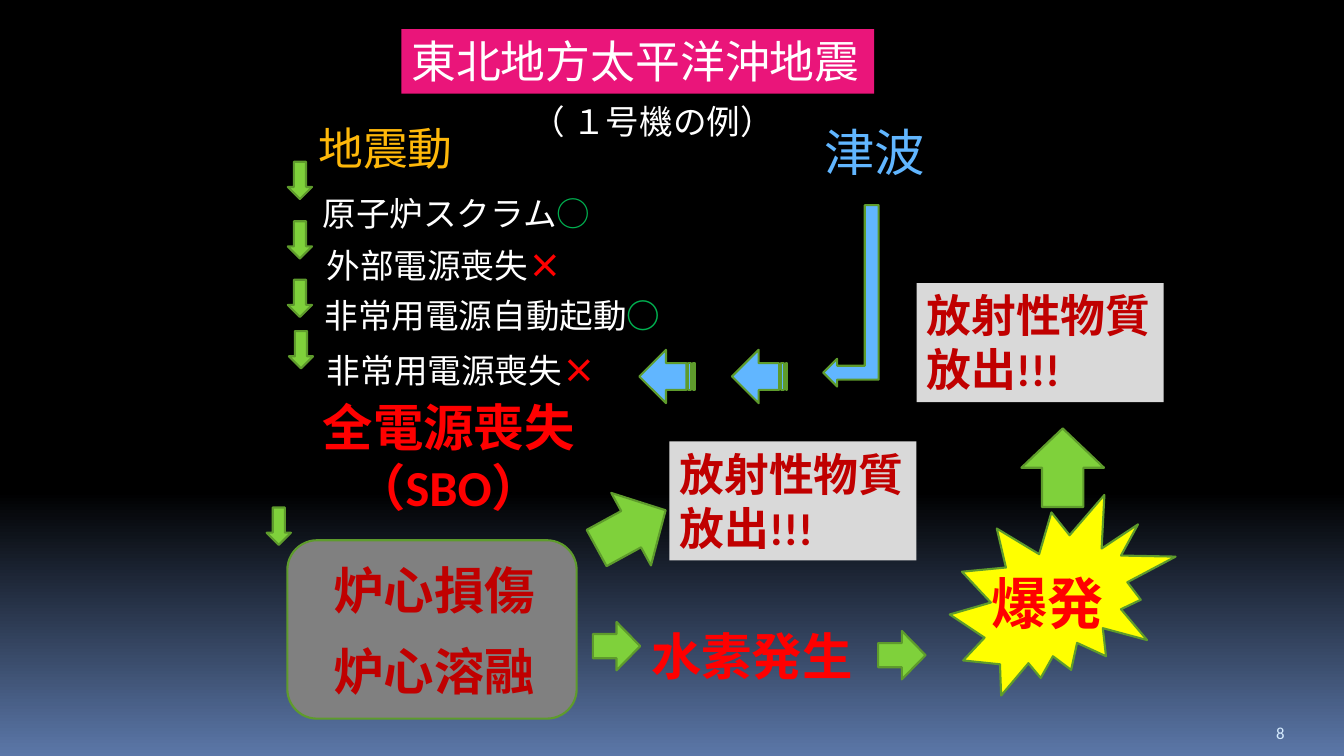
from dataclasses import dataclass

from pptx import Presentation
from pptx.dml.color import RGBColor
from pptx.enum.shapes import MSO_SHAPE
from pptx.enum.text import MSO_ANCHOR, PP_ALIGN
from pptx.util import Inches, Pt

RECT = MSO_SHAPE.RECTANGLE
ROUNDED = MSO_SHAPE.ROUNDED_RECTANGLE
BURST = MSO_SHAPE.EXPLOSION2
ARROW = MSO_SHAPE.RIGHT_ARROW
STRIPED_ARROW = MSO_SHAPE.STRIPED_RIGHT_ARROW
BENT_ARROW = MSO_SHAPE.BENT_UP_ARROW
LEFT, CENTER = PP_ALIGN.LEFT, PP_ALIGN.CENTER
TOP, BOTTOM = MSO_ANCHOR.TOP, MSO_ANCHOR.BOTTOM


@dataclass(frozen=True)
class Theme:
    font: str = "Calibri"
    mark_font: str = "Noto Sans CJK JP"
    black: str = "000000"
    dusk: str = "5B77A8"
    white: str = "FFFFFF"
    pink: str = "EA157A"
    amber: str = "FEB80A"
    sky: str = "61B6FF"
    green: str = "7FD13B"
    outline: str = "5E9B2C"
    ok: str = "00B050"
    red: str = "FF0000"
    dark_red: str = "C00000"
    yellow: str = "FFFF00"
    gray: str = "808080"
    light_gray: str = "D9D9D9"
    page: str = "D6ECFF"
    burst_size: int = 40
    stage_size: int = 36
    heading_size: int = 32
    step_size: int = 24
    page_size: int = 12
    outline_width: float = 1.5


THEME = Theme()


def rgb(color):
    return RGBColor.from_string(color)


def add_figure(slide, kind, box, fill, rotation=0, outlined=True):
    figure = slide.shapes.add_shape(kind, *map(Inches, box))
    figure.shadow.inherit = False
    figure.rotation = rotation
    figure.fill.solid()
    figure.fill.fore_color.rgb = rgb(fill)
    if outlined:
        figure.line.color.rgb = rgb(THEME.outline)
        figure.line.width = Pt(THEME.outline_width)
    else:
        figure.line.fill.background()
    return figure


def write(frame, lines, size, color, bold=False, align=LEFT, wrap=True, anchor=TOP):
    frame.word_wrap = wrap
    frame.vertical_anchor = anchor
    for index, line in enumerate(lines):
        paragraph = frame.add_paragraph() if index else frame.paragraphs[0]
        paragraph.alignment = align
        paragraph.font.name = THEME.font
        paragraph.font.size = Pt(size)
        paragraph.font.bold = bold
        paragraph.font.color.rgb = rgb(color)
        paragraph.add_run().text = line


def add_label(slide, box, text, size, color, **style):
    label = slide.shapes.add_textbox(*map(Inches, box))
    write(label.text_frame, [text], size, color, **style)
    return label


def add_step(slide, box, text, mark, mark_bold):
    """Place one plant event followed by its success or failure mark."""
    step = add_label(slide, box, text, THEME.step_size, THEME.white)
    result = step.text_frame.paragraphs[0].add_run()
    result.text = mark
    result.font.bold = mark_bold
    failed = mark == "×"
    result.font.color.rgb = rgb(THEME.red if failed else THEME.ok)
    if failed:
        result.font.name = THEME.mark_font


def add_release(slide, left, top):
    """Place a gray panel announcing a release of radioactive material."""
    panel = add_figure(slide, RECT, (left, top, 2.45, 1.18), THEME.light_gray, outlined=False)
    write(panel.text_frame, ["放射性物質", "放出!!!"], THEME.heading_size,
          THEME.dark_red, bold=True, wrap=False)


def add_title(slide, left, top):
    banner = add_figure(slide, RECT, (left, top, 4.69, 0.64), THEME.pink, outlined=False)
    write(banner.text_frame, ["東北地方太平洋沖地震"], THEME.heading_size, THEME.white, wrap=False)
    add_label(slide, (left + 1.19, top + 0.66, 2.62, 0.5), "（ １号機の例）",
              THEME.step_size, THEME.white, wrap=False)


def add_earthquake_column(slide, left, top):
    add_label(slide, (left, top, 1.65, 0.64), "地震動", THEME.heading_size,
              THEME.amber, align=CENTER)
    steps = [
        (0.10, 0.71, 3.54, "原子炉スクラム", "○", False),
        (0.14, 1.23, 3.06, "外部電源喪失", "×", True),
        (0.12, 1.73, 4.13, "非常用電源自動起動", "○", True),
        (-0.19, 2.27, 4.25, "　非常用電源喪失", "×", True),
    ]
    for dx, dy, width, text, mark, mark_bold in steps:
        add_step(slide, (left + dx, top + dy, width, 0.5), text, mark, mark_bold)
    add_label(slide, (left - 0.68, top + 2.73, 4.26, 1.31), "全電源喪失（SBO）",
              THEME.stage_size, THEME.red, bold=True, align=CENTER)
    for dx, dy in [(-0.21, 0.52), (-0.21, 1.11), (-0.21, 1.69), (-0.2, 2.2), (-0.42, 3.95)]:
        add_figure(slide, ARROW, (left + dx, top + dy, 0.37, 0.24), THEME.green, rotation=90)


def add_tsunami_path(slide, left, top):
    add_label(slide, (left, top, 1.97, 0.71), "津波", THEME.stage_size, THEME.sky, align=CENTER)
    descent = add_figure(slide, BENT_ARROW, (left - 0.15, top + 1.51, 1.8, 0.55),
                         THEME.sky, rotation=90)
    descent.element.spPr.xfrm.set("flipV", "1")
    for dx in (-1.35, -0.43):
        add_figure(slide, STRIPED_ARROW, (left + dx, top + 2.32, 0.55, 0.53),
                   THEME.sky, rotation=180)


def add_core_damage(slide, left, top):
    add_figure(slide, ROUNDED, (left, top, 2.87, 1.77), THEME.gray)
    for row, text in enumerate(["炉心損傷", "炉心溶融"]):
        add_label(slide, (left + 0.27, top + 0.14 + row * 0.8, 2.37, 0.71), text,
                  THEME.stage_size, THEME.dark_red, bold=True, align=CENTER)
    add_figure(slide, ARROW, (left + 3.02, top - 0.52, 0.78, 0.82), THEME.green, rotation=331.3)


def add_hydrogen(slide, left, top):
    add_label(slide, (left, top, 2.4, 0.71), "水素発生", THEME.stage_size, THEME.red, bold=True)
    for dx, dy in [(-0.48, 0.02), (2.35, 0.11)]:
        add_figure(slide, ARROW, (left + dx, top + dy, 0.47, 0.48), THEME.green)


def add_explosion(slide, left, top):
    add_figure(slide, BURST, (left, top, 2.24, 1.99), THEME.yellow)
    add_label(slide, (left + 0.32, top + 0.68, 1.73, 0.77), "爆発", THEME.burst_size,
              THEME.red, bold=True)
    add_figure(slide, ARROW, (left + 0.73, top - 0.68, 0.78, 0.82), THEME.green, rotation=270)


def paint_background(slide):
    fill = slide.background.fill
    fill.gradient()
    fill.gradient_angle = 270
    for stop, position, color in zip(fill.gradient_stops, (0.65, 1), (THEME.black, THEME.dusk)):
        stop.position = position
        stop.color.rgb = rgb(color)


def main():
    deck = Presentation()
    deck.slide_width, deck.slide_height = Inches(13.33), Inches(7.5)
    slide = deck.slides.add_slide(deck.slide_layouts[6])
    paint_background(slide)
    add_explosion(slide, 9.42, 4.91)
    add_core_damage(slide, 2.85, 5.36)
    add_earthquake_column(slide, 3, 1.15)
    add_tsunami_path(slide, 7.69, 1.15)
    add_hydrogen(slide, 6.36, 6.15)
    add_title(slide, 3.98, 0.29)
    add_release(slide, 6.64, 4.38)
    add_release(slide, 9.09, 2.81)
    add_label(slide, (12.56, 7.02, 0.67, 0.4), "8", THEME.page_size, THEME.page, anchor=BOTTOM)
    deck.save("out.pptx")


if __name__ == "__main__":
    main()
